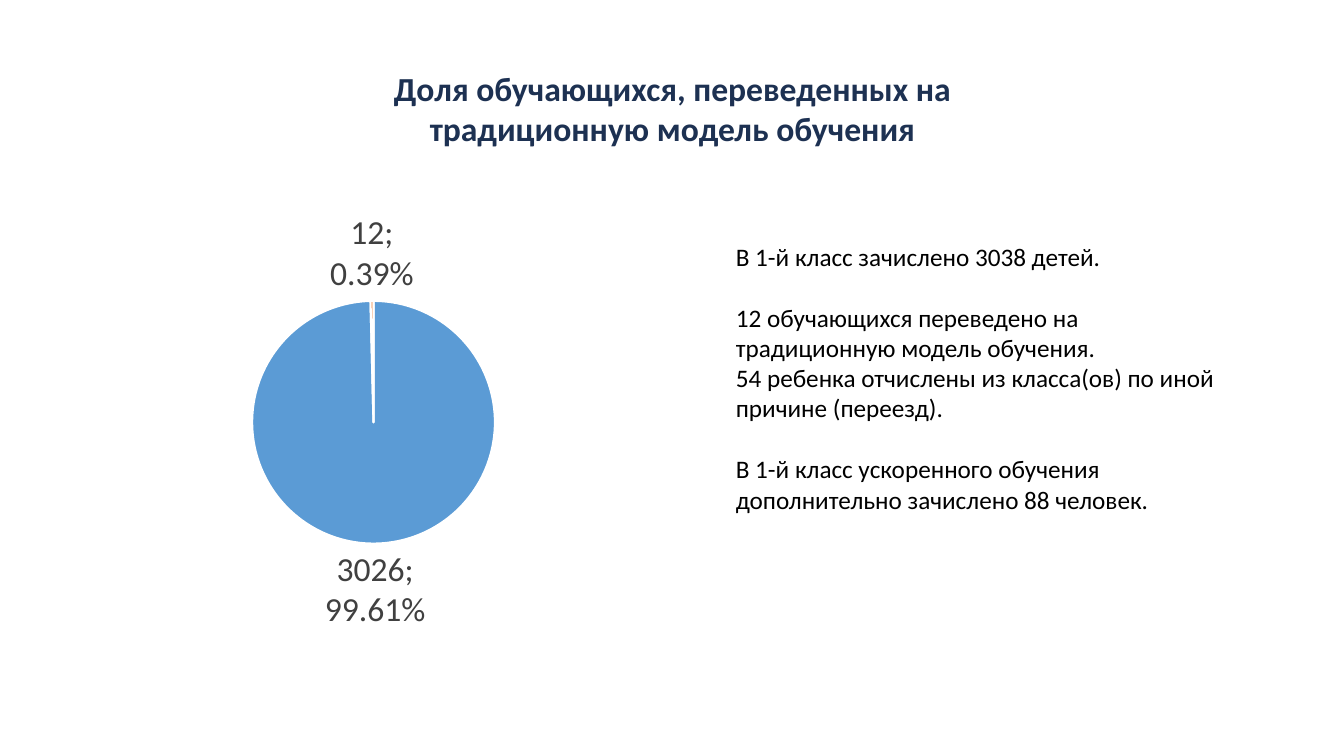
import pptx
import pptx.util
import pptx.chart.data
import pptx.dml.color
import pptx.enum.chart
import pptx.enum.text
from lxml import etree
from pptx.util import Inches

THEME = {
    "font": "Calibri",
    "title": "1D3152", "body": "000000", "label": "404040", "border": "FFFFFF",
    "slices": ["5B9BD5", "ED7D31"],
    "large": 24, "small": 18,
}


def style(font, size, color, bold=False):
    font.name = THEME["font"]
    font.size = pptx.util.Pt(size)
    font.bold = bold
    font.color.rgb = pptx.dml.color.RGBColor.from_string(color)


def add_text(s, box, paragraphs, size, color, bold=False, align=None):
    tf = s.shapes.add_textbox(*[Inches(v) for v in box]).text_frame
    tf.word_wrap = True
    for i, (text, gap) in enumerate(paragraphs):
        p = tf.paragraphs[0] if i == 0 else tf.add_paragraph()
        p.text = text
        p.alignment = align
        if gap:
            p.space_before = pptx.util.Pt(gap)
        style(p.runs[0].font, size, color, bold)


prs = pptx.Presentation()
prs.slide_width, prs.slide_height = Inches(13.33), Inches(7.5)
s = prs.slides.add_slide(prs.slide_layouts[6])

line_gap = 22
add_text(s, (7.2, 2.34, 5.09, 2.83), [
    ("В 1-й класс зачислено 3038 детей.", 0),
    ("12 обучающихся переведено на традиционную модель обучения.", line_gap),
    ("54 ребенка отчислены из класса(ов) по иной причине (переезд).", 0),
    ("В 1-й класс ускоренного обучения дополнительно зачислено 88 человек.", line_gap),
], THEME["small"], THEME["body"])

add_text(s, (2.92, 0.62, 7.5, 0.91),
         [("Доля обучающихся, переведенных на традиционную модель обучения", 0)],
         THEME["large"], THEME["title"], True, pptx.enum.text.PP_ALIGN.CENTER)

data = pptx.chart.data.CategoryChartData()
data.categories = ["1", "2"]
data.add_series("Series 1", [3026, 12])
chart = s.shapes.add_chart(pptx.enum.chart.XL_CHART_TYPE.PIE, Inches(0.69), Inches(1.96),
                           Inches(5.97), Inches(4.46), data).chart
chart.has_title = False
chart.has_legend = False
style(chart.font, THEME["large"], THEME["body"])

plot = chart.plots[0]
plot.vary_by_categories = True
for i, color in enumerate(THEME["slices"]):
    fmt = plot.series[0].points[i].format
    fmt.fill.solid()
    fmt.fill.fore_color.rgb = pptx.dml.color.RGBColor.from_string(color)
    fmt.line.color.rgb = pptx.dml.color.RGBColor.from_string(THEME["border"])
    fmt.line.width = pptx.util.Pt(1.5)

labels = plot.series[0].data_labels
labels.show_value = True
labels.show_percentage = True
labels.number_format = "0.00%"
labels.number_format_is_linked = False
labels.position = pptx.enum.chart.XL_LABEL_POSITION.OUTSIDE_END
style(labels.font, THEME["large"], THEME["label"])

C = "{http://schemas.openxmlformats.org/drawingml/2006/chart}"
separator = etree.Element(C + "separator")
separator.text = "; "
next(chart.element.iter(C + "showBubbleSize")).addnext(separator)

area = next(chart.element.iter(C + "plotArea"))
for old in area.findall(C + "layout"):
    area.remove(old)
layout = etree.Element(C + "layout")
manual = etree.SubElement(layout, C + "manualLayout")
for tag, value in [("layoutTarget", "inner"), ("xMode", "edge"), ("yMode", "edge"),
                   ("x", "0.3"), ("y", "0.23"), ("w", "0.41"), ("h", "0.54")]:
    etree.SubElement(manual, C + tag).set("val", value)
area.insert(0, layout)

prs.save("out.pptx")
